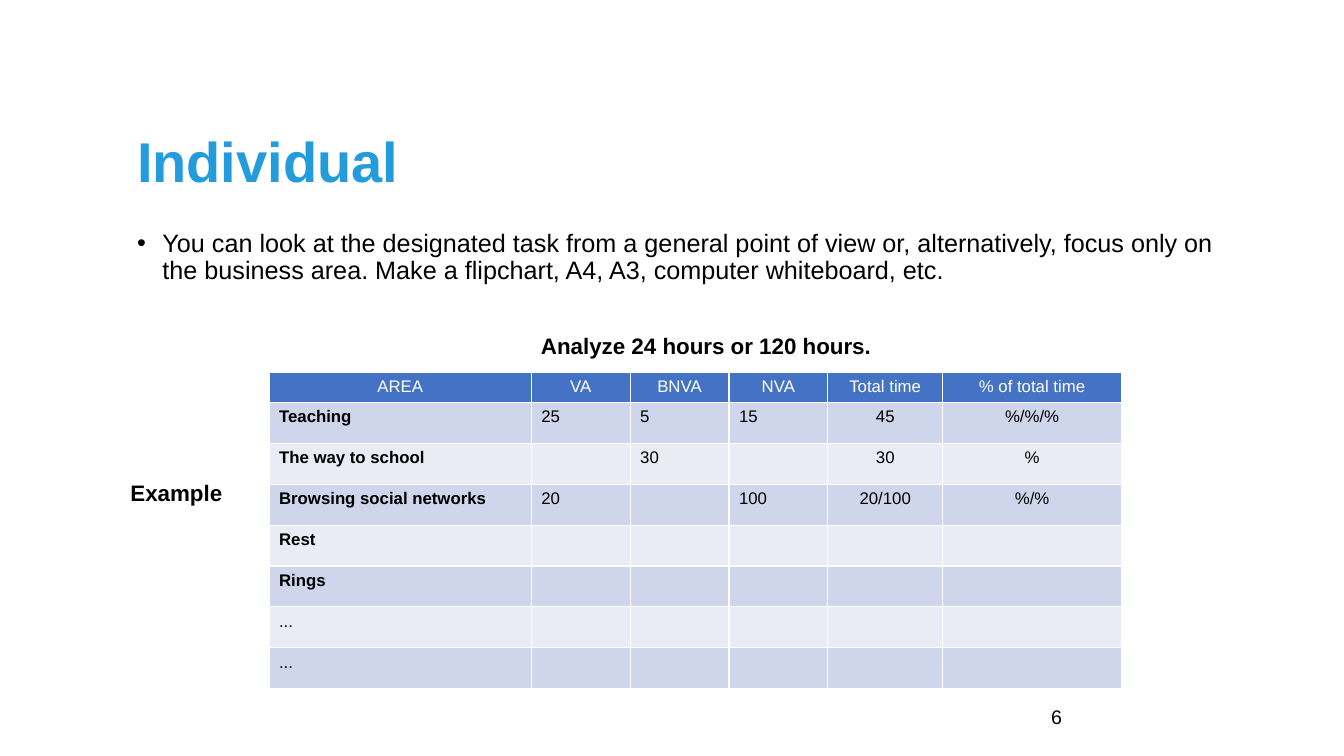
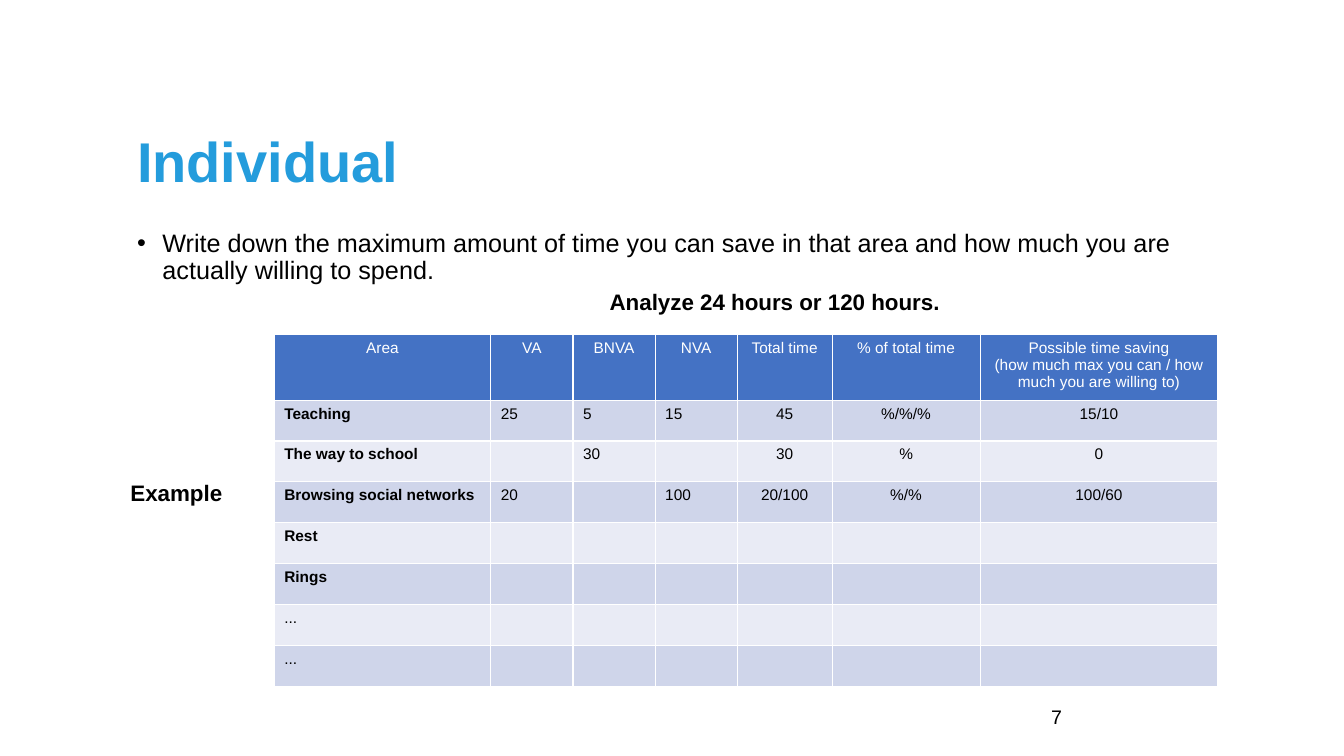
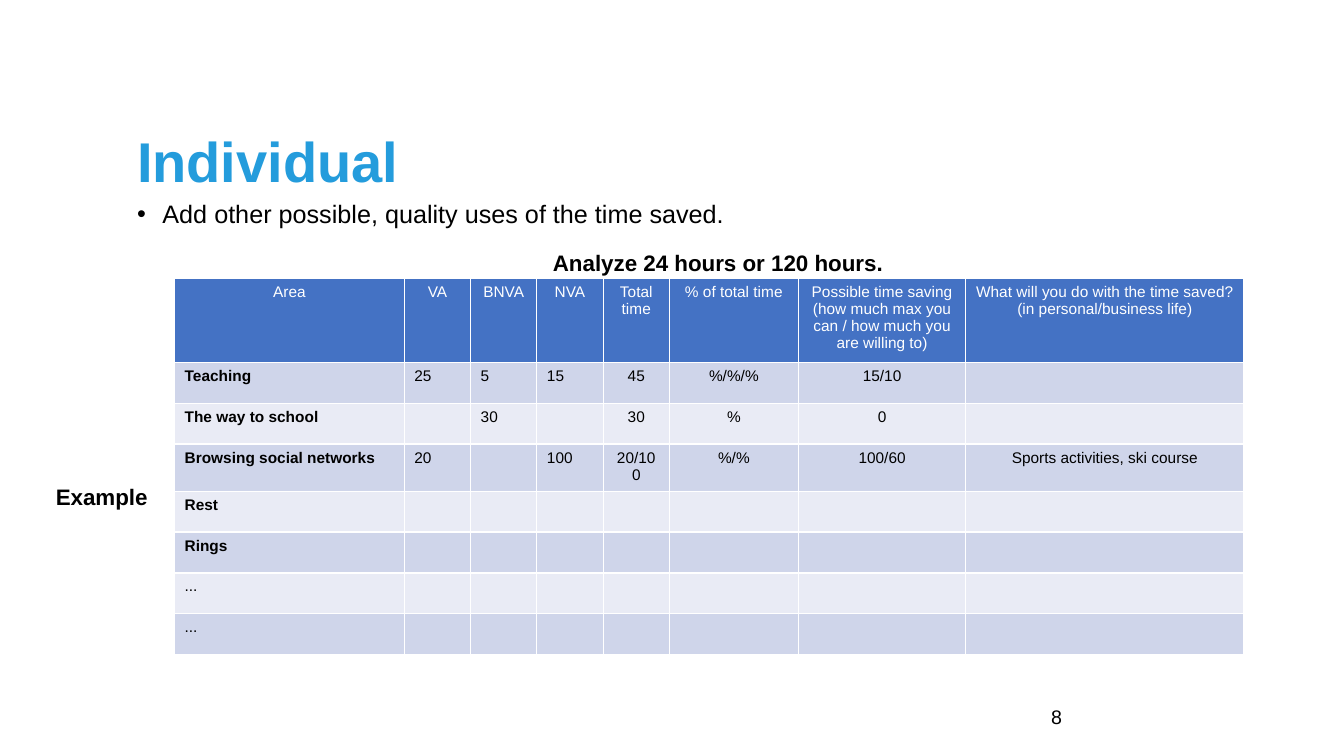
import pptx
import pptx.util
import pptx.dml.color
import pptx.enum.text
import pptx.oxml
import pptx.oxml.ns
from lxml import etree

Cm, Pt = pptx.util.Cm, pptx.util.Pt
RGBColor = pptx.dml.color.RGBColor
ALIGN = pptx.enum.text.PP_ALIGN
ANCHOR = pptx.enum.text.MSO_ANCHOR
FIT = pptx.enum.text.MSO_AUTO_SIZE

# Shared style
FONT = "Arial"
SKY = RGBColor(0x24, 0x9C, 0xDC)
BLACK = RGBColor(0, 0, 0)
WHITE = RGBColor(0xFF, 0xFF, 0xFF)
BLUE = RGBColor(0x44, 0x72, 0xC4)
BANDS = (RGBColor(0xCF, 0xD5, 0xEA), RGBColor(0xE9, 0xEB, 0xF5))
ROW = 1.03

# Table content; each slide shows the first columns of it
HEADS = ["Area", "VA", "BNVA", "NVA", "Total time", "% of total time",
         "Possible time saving\n(how much max you can / how much you are willing to)",
         "What will you do with the time saved?\n(in personal/business life)"]
ROWS = [
    ["Teaching", "25", "5", "15", "45", "%/%/%", "15/10", ""],
    ["The way to school", "", "30", "", "30", "%", "0", ""],
    ["Browsing social networks", "20", "", "100", "20/100", "%/%", "100/60",
     "Sports activities, ski course"],
    *[[name] + [""] * 7 for name in ("Rest", "Rings", "...", "...")],
]

# What differs from slide to slide, lengths in cm
SLIDES = [
    dict(page="6", first="AREA", size=12, body=(5.69, 10.44),
         text="You can look at the designated task from a general point of view or, "
              "alternatively, focus only on the business area. Make a flipchart, A4, A3, "
              "computer whiteboard, etc.",
         note=(12.7, 8.25), label=(2.39, 11.96), grid=(6.78, 9.38), head=0.74,
         cols=[6.61, 2.49, 2.49, 2.49, 2.9, 4.5]),
    dict(page="7", first="Area", size=11, body=(5.69, 10.44),
         text="Write down the maximum amount of time you can save in that area and "
              "how much you are actually willing to spend.",
         note=(14.43, 7.14), label=(2.39, 11.96), grid=(6.91, 8.43), head=1.65,
         cols=[5.46, 2.07, 2.07, 2.07, 2.39, 3.73, 5.99]),
    dict(page="8", first="Area", size=11, body=(4.95, 1.4),
         text="Add other possible, quality uses of the time saved.",
         note=(13, 6.15), label=(0.51, 12.04), grid=(4.4, 7.01), head=2.12,
         cols=[5.79, 1.67, 1.67, 1.67, 1.67, 3.25, 4.22, 7.01]),
]


def write(par, text, size, color=BLACK, bold=False, align=ALIGN.LEFT):
    par.alignment = align
    run = par.add_run()
    run.text = text
    font = run.font
    font.name, font.size, font.bold = FONT, Pt(size), bold
    font.color.rgb = color


def place(shape, left, top, width, height):
    shape.left, shape.top = Cm(left), Cm(top)
    shape.width, shape.height = Cm(width), Cm(height)


def add_title(slide, text):
    title = slide.shapes.title
    place(title, 3.2, 2.13, 25.1, 4.01)
    frame = title.text_frame
    frame.auto_size, frame.vertical_anchor = FIT.NONE, ANCHOR.MIDDLE
    par = frame.paragraphs[0]
    par.line_spacing = 0.9
    write(par, text, 40, SKY, True)


def add_list(slide, text, top, height):
    body = slide.placeholders[1]
    place(body, 3.2, top, 28.4, height)
    frame = body.text_frame
    frame.auto_size = FIT.NONE
    par = frame.paragraphs[0]
    props = par._p.get_or_add_pPr()
    props.set("marL", str(Cm(0.64)))
    props.set("indent", str(-Cm(0.64)))
    etree.SubElement(props, pptx.oxml.ns.qn("a:buFont")).set("typeface", FONT)
    etree.SubElement(props, pptx.oxml.ns.qn("a:buChar")).set("char", "•")
    par.line_spacing, par.space_before = 0.9, Pt(0)
    write(par, text, 18)


def add_text(slide, text, spot, width, size, bold=False, align=ALIGN.LEFT):
    box = slide.shapes.add_textbox(Cm(spot[0]), Cm(spot[1]), Cm(width), Cm(0.94))
    box.text_frame.word_wrap = True
    write(box.text_frame.paragraphs[0], text, size, bold=bold, align=align)


def add_edges(cell):
    props = cell._tc.get_or_add_tcPr()
    for side in ("lnL", "lnR", "lnT", "lnB"):
        line = etree.SubElement(props, pptx.oxml.ns.qn("a:" + side), w=str(Pt(1)))
        fill = etree.SubElement(line, pptx.oxml.ns.qn("a:solidFill"))
        etree.SubElement(fill, pptx.oxml.ns.qn("a:srgbClr"), val=str(WHITE))


def fill_cell(cell, text, size, back, color, bold, align):
    add_edges(cell)
    cell.fill.solid()
    cell.fill.fore_color.rgb = back
    frame = cell.text_frame
    for k, part in enumerate(text.split("\n") if text else []):
        par = frame.add_paragraph() if k else frame.paragraphs[0]
        write(par, part, size, color, bold, align)


def add_grid(slide, spot, cols, head, size, first):
    rows = [[first] + HEADS[1:]] + ROWS
    table = slide.shapes.add_table(
        len(rows), len(cols), Cm(spot[0]), Cm(spot[1]),
        Cm(sum(cols)), Cm(head + ROW * len(ROWS))).table
    table.first_row = table.horz_banding = False
    for c, width in enumerate(cols):
        table.columns[c].width = Cm(width)
    for r, row in enumerate(rows):
        table.rows[r].height = Cm(ROW if r else head)
        back = BANDS[(r - 1) % 2] if r else BLUE
        for c, text in enumerate(row[:len(cols)]):
            bold = r > 0 and c == 0 and text != "..."
            align = ALIGN.LEFT if r and c < 4 else ALIGN.CENTER
            fill_cell(table.cell(r, c), text, size, back,
                      BLACK if r else WHITE, bold, align)


def main():
    deck = pptx.Presentation()
    deck.slide_width, deck.slide_height = Cm(33.87), Cm(19.05)
    for data in SLIDES:
        slide = deck.slides.add_slide(deck.slide_layouts[1])
        add_title(slide, "Individual")
        add_list(slide, data["text"], *data["body"])
        add_text(slide, data["page"], (26.24, 17.65), 7.62, 14)
        add_text(slide, "Analyze 24 hours or 120 hours.", data["note"],
                 10.19, 16, True, ALIGN.CENTER)
        add_text(slide, "Example", data["label"], 4.11, 16, True, ALIGN.CENTER)
        add_grid(slide, data["grid"], data["cols"], data["head"],
                 data["size"], data["first"])
    deck.save("out.pptx")


if __name__ == "__main__":
    main()
